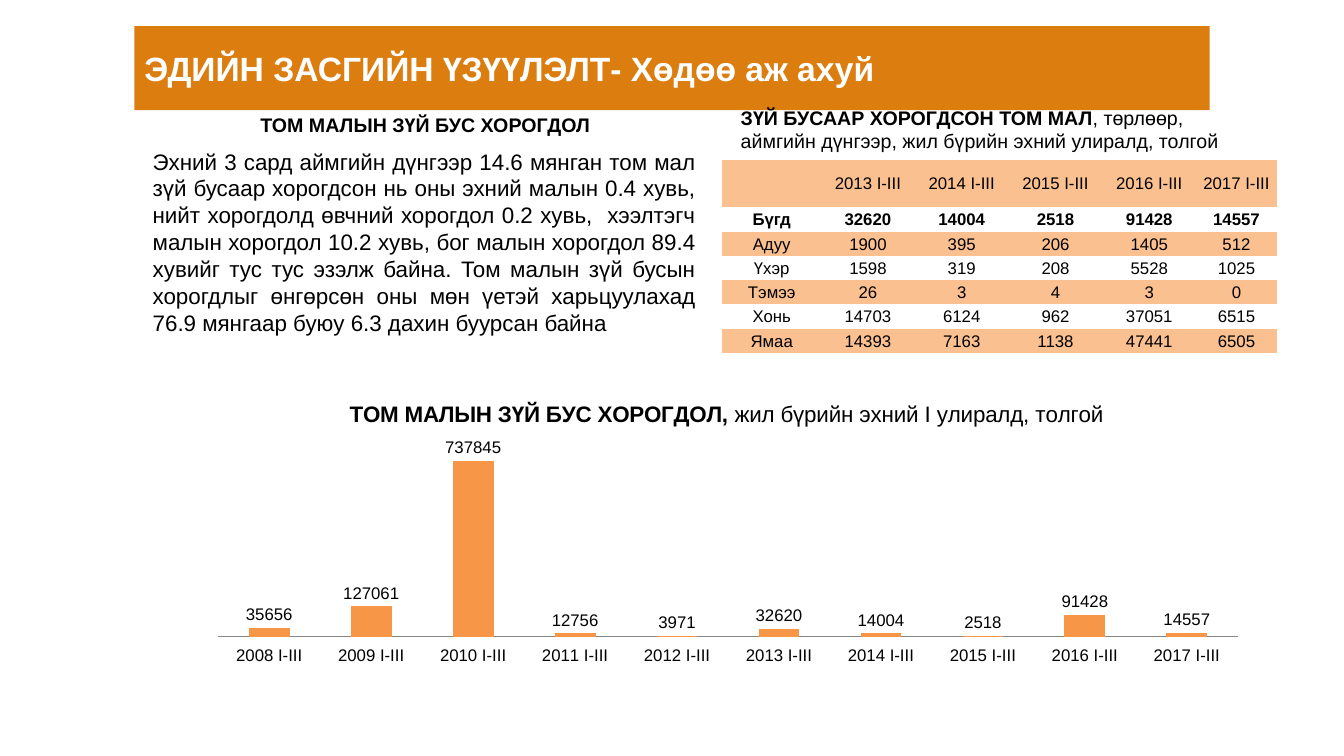
from lxml import etree
from pptx import Presentation
from pptx.chart.data import CategoryChartData
from pptx.dml.color import RGBColor
from pptx.enum.chart import XL_CHART_TYPE as ChartType, XL_LABEL_POSITION as LabelPosition
from pptx.enum.chart import XL_TICK_MARK as TickMark, XL_TICK_LABEL_POSITION as TickLabels
from pptx.enum.text import MSO_ANCHOR as Anchor, PP_ALIGN as Align
from pptx.oxml import parse_xml
from pptx.oxml.ns import nsdecls, qn
from pptx.util import Pt

COLORS = {"banner": "DC7D0F", "band": "FAC090", "bar": "F79646",
          "axis": "868686", "text": "000000", "light": "FFFFFF"}
PLAIN_TABLE = "{2D5ABB26-0587-4C30-8999-92F81FD0307C}"
SUMMARY = (
    "Эхний 3 сард аймгийн дүнгээр 14.6 мянган том мал зүй бусаар хорогдсон нь оны "
    "эхний малын 0.4 хувь, нийт хорогдолд өвчний хорогдол 0.2 хувь,  хээлтэгч малын "
    "хорогдол 10.2 хувь, бог малын хорогдол 89.4 хувийг тус тус эзэлж байна. Том малын "
    "зүй бусын хорогдлыг өнгөрсөн оны мөн үетэй харьцуулахад 76.9 мянгаар буюу 6.3 "
    "дахин буурсан байна"
)
LOSSES_BY_KIND = [
    ["", *(f"{year} I-III" for year in range(2013, 2018))],
    ["Бүгд", 32620, 14004, 2518, 91428, 14557],
    ["Адуу", 1900, 395, 206, 1405, 512],
    ["Үхэр", 1598, 319, 208, 5528, 1025],
    ["Тэмээ", 26, 3, 4, 3, 0],
    ["Хонь", 14703, 6124, 962, 37051, 6515],
    ["Ямаа", 14393, 7163, 1138, 47441, 6505],
]
LOSSES_BY_YEAR = [35656, 127061, 737845, 12756, 3971, 32620, 14004, 2518, 91428, 14557]


def color(name):
    """Return the named colour of the slide."""
    return RGBColor.from_string(COLORS[name])


def style(font, size, bold=False, ink="text"):
    """Format a font in the slide's typeface."""
    font.name, font.size, font.bold = "Arial", Pt(size), bold
    font.color.rgb = color(ink)


def write(frame, *parts, size, bold=False, ink="text", align=Align.LEFT):
    """Write parts into the first paragraph; only the first part may be bold."""
    paragraph = frame.paragraphs[0]
    paragraph.alignment = align
    for index, part in enumerate(parts):
        run = paragraph.add_run()
        run.text = part
        style(run.font, size, bold and index == 0, ink)


def add_banner(slide, text):
    """Turn the title placeholder into the coloured banner."""
    banner = slide.shapes.title
    banner.left, banner.top, banner.width, banner.height = Pt(96), Pt(18.7), Pt(768), Pt(60)
    banner.fill.solid()
    banner.fill.fore_color.rgb = color("banner")
    banner.text_frame.vertical_anchor = Anchor.MIDDLE
    write(banner.text_frame, text, size=24, bold=True, ink="light", align=Align.JUSTIFY)


def add_text(slide, left, top, width, height, *parts, **text_format):
    """Add a wrapping text box."""
    frame = slide.shapes.add_textbox(Pt(left), Pt(top), Pt(width), Pt(height)).text_frame
    frame.word_wrap = True
    write(frame, *parts, **text_format)


def add_grid(slide, left, top, widths, heights, rows, inset, banded=True, bold_row=0, **text_format):
    """Add a table without borders, every other row filled when banded."""
    grid = slide.shapes.add_table(len(rows), len(widths), Pt(left), Pt(top),
                                  Pt(sum(widths)), Pt(sum(heights)))
    table = grid.table
    table._tbl.tblPr.find(qn("a:tableStyleId")).text = PLAIN_TABLE
    for column, width in zip(table.columns, widths):
        column.width = Pt(width)
    for r, values in enumerate(rows):
        table.rows[r].height = Pt(heights[r])
        for c, value in enumerate(values):
            cell = table.cell(r, c)
            cell.margin_left = cell.margin_right = cell.margin_top = Pt(inset)
            cell.margin_bottom = 0
            cell.vertical_anchor = Anchor.MIDDLE
            if banded and r % 2 == 0:
                cell.fill.solid()
                cell.fill.fore_color.rgb = color("band")
            else:
                cell.fill.background()
            write(cell.text_frame, str(value), bold=r == bold_row, **text_format)


def set_plot_area(chart, **fractions):
    """Fix the inner plot area as fractions of the chart."""
    plot_area = chart._chartSpace.chart.plotArea
    for layout in plot_area.findall(qn("c:layout")):
        plot_area.remove(layout)
    layout = parse_xml(f'<c:layout {nsdecls("c")}><c:manualLayout/></c:layout>')
    settings = {"layoutTarget": "inner", "xMode": "edge", "yMode": "edge", **fractions}
    for tag, value in settings.items():
        etree.SubElement(layout[0], qn(f"c:{tag}")).set("val", str(value))
    plot_area.insert(0, layout)


def add_yearly_chart(slide):
    """Add the column chart of losses by year."""
    losses = CategoryChartData()
    losses.categories = [f"{year} I-III" for year in range(2008, 2018)]
    losses.add_series("Series 1", LOSSES_BY_YEAR)
    chart = slide.shapes.add_chart(ChartType.COLUMN_CLUSTERED, Pt(144), Pt(276),
                                   Pt(750), Pt(204), losses).chart
    style(chart.font, 12)
    chart.has_legend = False
    chart.has_title = True
    write(chart.chart_title.text_frame, "ТОМ МАЛЫН ЗҮЙ БУС ХОРОГДОЛ,",
          " жил бүрийн эхний I улиралд, толгой", size=16, bold=True, align=Align.CENTER)
    chart.chart_title.include_in_layout = False

    plot = chart.plots[0]
    plot.vary_by_categories = False
    plot.gap_width, plot.overlap = 150, -25
    plot.has_data_labels = True
    labels = plot.data_labels
    labels.show_value = True
    labels.position = LabelPosition.OUTSIDE_END
    style(labels.font, 12)
    bars = plot.series[0]
    bars.format.fill.solid()
    bars.format.fill.fore_color.rgb = color("bar")

    years, amounts = chart.category_axis, chart.value_axis
    years.major_tick_mark = years.minor_tick_mark = TickMark.NONE
    years.tick_label_position = TickLabels.LOW
    years.format.line.color.rgb = color("axis")
    style(years.tick_labels.font, 12)
    amounts.visible = False
    amounts.has_major_gridlines = False
    amounts.minimum_scale, amounts.maximum_scale = 0, 800000
    set_plot_area(chart, x=0.016, y=0.209, w=0.971, h=0.667)


def main():
    """Build and save the slide."""
    deck = Presentation()
    deck.slide_width, deck.slide_height = Pt(960), Pt(540)
    slide = deck.slides.add_slide(deck.slide_layouts[5])
    add_banner(slide, "ЭДИЙН ЗАСГИЙН ҮЗҮҮЛЭЛТ- Хөдөө аж ахуй")
    add_text(slide, 102, 102, 402, 168, SUMMARY, size=16, align=Align.JUSTIFY)
    add_grid(slide, 186, 78, [246], [24], [["ТОМ МАЛЫН ЗҮЙ БУС ХОРОГДОЛ"]],
             inset=0, banded=False, size=14)
    add_grid(slide, 516, 114, [70.5, *[67] * 4, 57.6], [33.8, 17.8, *[17.3] * 5],
             LOSSES_BY_KIND, inset=0.7, bold_row=1, size=12, align=Align.CENTER)
    add_text(slide, 522, 72, 378, 41, "ЗҮЙ БУСААР ХОРОГДСОН ТОМ МАЛ",
             ", төрлөөр, аймгийн дүнгээр, жил бүрийн эхний улиралд, толгой", size=14, bold=True)
    add_yearly_chart(slide)
    deck.save("out.pptx")


if __name__ == "__main__":
    main()
